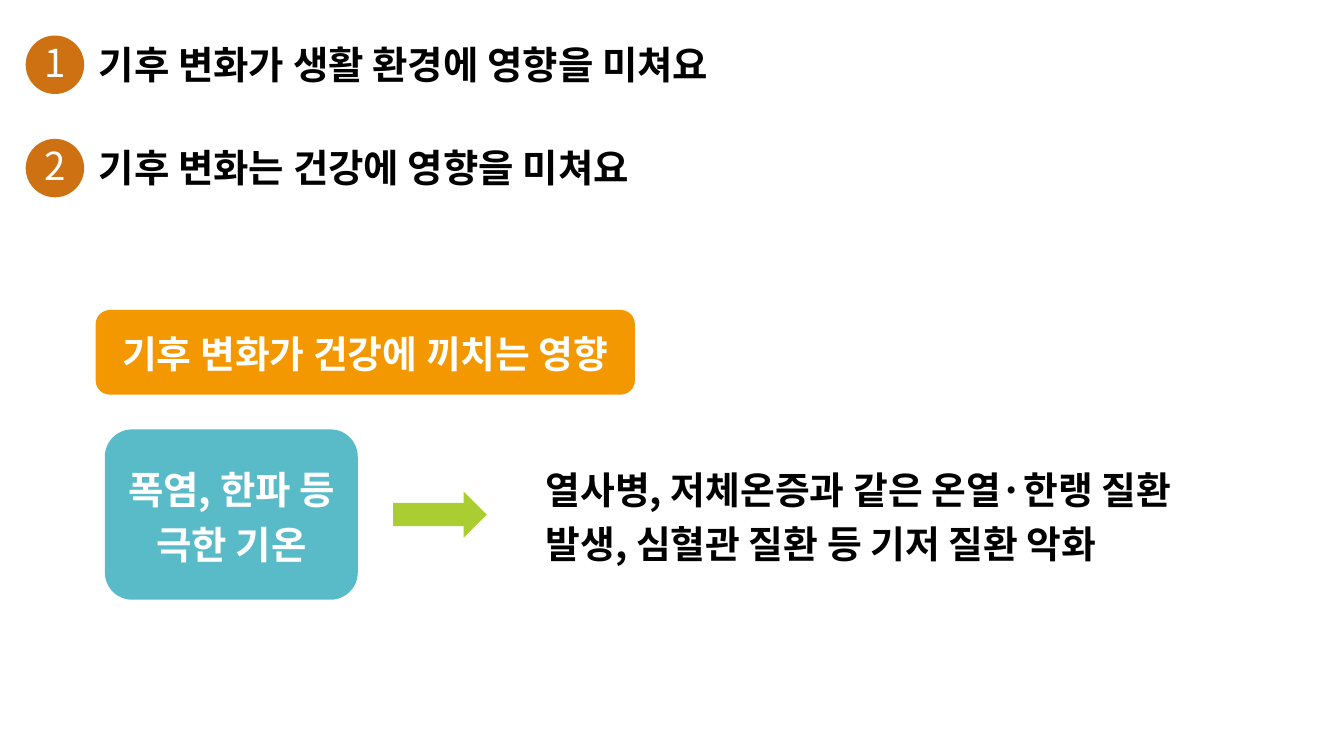
from dataclasses import dataclass

from lxml.etree import SubElement
from pptx import Presentation
from pptx.dml.color import RGBColor
from pptx.enum.shapes import MSO_SHAPE as Shape
from pptx.enum.text import MSO_ANCHOR as Anchor, PP_ALIGN as Align
from pptx.oxml.ns import qn
from pptx.util import Inches, Pt


@dataclass(frozen=True)
class Theme:
    font: str = "Noto Sans CJK KR"
    heading_size: int = 55
    body_size: int = 54
    text: str = "000000"
    light: str = "FFFFFF"
    badge: str = "CE7112"
    banner: str = "F39800"
    cause: str = "59BAC8"
    arrow: str = "AACE32"


class SlideBuilder:
    """Places elements at percentages of the slide's size."""

    def __init__(self, presentation, theme):
        self.theme = theme
        self.width = presentation.slide_width
        self.height = presentation.slide_height
        self.slide = presentation.slides.add_slide(presentation.slide_layouts[5])

    def box(self, left, top, width, height):
        return (int(left * self.width / 100), int(top * self.height / 100),
                int(width * self.width / 100), int(height * self.height / 100))

    def shape(self, kind, area, fill, corner=None):
        shape = self.slide.shapes.add_shape(kind, *self.box(*area))
        shape.shadow.inherit = False
        shape.fill.solid()
        shape.fill.fore_color.rgb = RGBColor.from_string(fill)
        shape.line.fill.background()
        if corner is not None:
            shape.adjustments[0] = corner

    def fill_text(self, shape, words, size, color, align=Align.LEFT,
                  anchor=Anchor.TOP, spacing=1.0, bold=True, inset=0.06):
        frame = shape.text_frame
        frame.word_wrap = True
        frame.vertical_anchor = anchor
        frame.margin_left = frame.margin_right = Inches(inset)
        frame.margin_top = frame.margin_bottom = Inches(0.06)
        paragraph = frame.paragraphs[0]
        paragraph.alignment = align
        paragraph.line_spacing = spacing
        paragraph.space_before = Pt(0)
        run = paragraph.add_run()
        run.text = words
        run.font.size = Pt(size)
        run.font.bold = bold
        run.font.color.rgb = RGBColor.from_string(color)
        run.font.name = self.theme.font
        # Hangul takes the East Asian typeface
        properties = run._r.get_or_add_rPr()
        SubElement(properties, qn("a:ea"), typeface=self.theme.font)

    def text(self, area, words, size, color, **style):
        shape = self.slide.shapes.add_textbox(*self.box(*area))
        self.fill_text(shape, words, size, color, **style)

    def heading(self, number, top, words, is_title=False):
        theme = self.theme
        area = (7.12, top, 56.47, 5)
        if is_title:
            title = self.slide.shapes.title
            title.left, title.top, title.width, title.height = self.box(*area)
            self.fill_text(title, words, theme.heading_size, theme.text)
        else:
            self.text(area, words, theme.heading_size, theme.text)
        self.shape(Shape.OVAL, (1.91, top - 0.3, 4.35, 7.73), theme.badge)
        self.text((2.66, top + 0.4, 2.89, 6.33), str(number),
                  theme.heading_size, theme.light, align=Align.CENTER,
                  anchor=Anchor.MIDDLE, spacing=0.9, bold=False)


def main():
    presentation = Presentation()
    presentation.slide_width = Inches(26.67)
    presentation.slide_height = Inches(15)
    theme = Theme()
    builder = SlideBuilder(presentation, theme)

    # Numbered headings
    headings = ["기후 변화가 생활 환경에 영향을 미쳐요", "기후 변화는 건강에 영향을 미쳐요"]
    for index, heading in enumerate(headings):
        builder.heading(index + 1, 5 + index * 13.67, heading, index == 0)

    # Topic banner
    builder.shape(Shape.ROUNDED_RECTANGLE, (7.12, 41, 40.12, 11.2), theme.banner)
    builder.text((7.8, 43.33, 38.77, 6.53), "기후 변화가 건강에 끼치는 영향",
                 theme.body_size, theme.light, align=Align.CENTER)

    # Cause
    builder.shape(Shape.ROUNDED_RECTANGLE, (7.8, 56.8, 18.82, 22.53),
                  theme.cause, corner=0.16)
    builder.text((8.81, 60, 16.84, 14.93), "폭염, 한파 등 극한 기온",
                 theme.heading_size, theme.light, align=Align.CENTER, spacing=1.2)

    # Effect
    builder.shape(Shape.RIGHT_ARROW, (29.25, 65, 6.97, 6.13), theme.arrow)
    builder.text((40.23, 60.13, 49.98, 14.6),
                 "열사병, 저체온증과 같은 온열·한랭 질환 발생, 심혈관 질환 등 기저 질환 악화",
                 theme.body_size, theme.text, spacing=1.2, inset=0.1)

    presentation.save("out.pptx")


if __name__ == "__main__":
    main()
